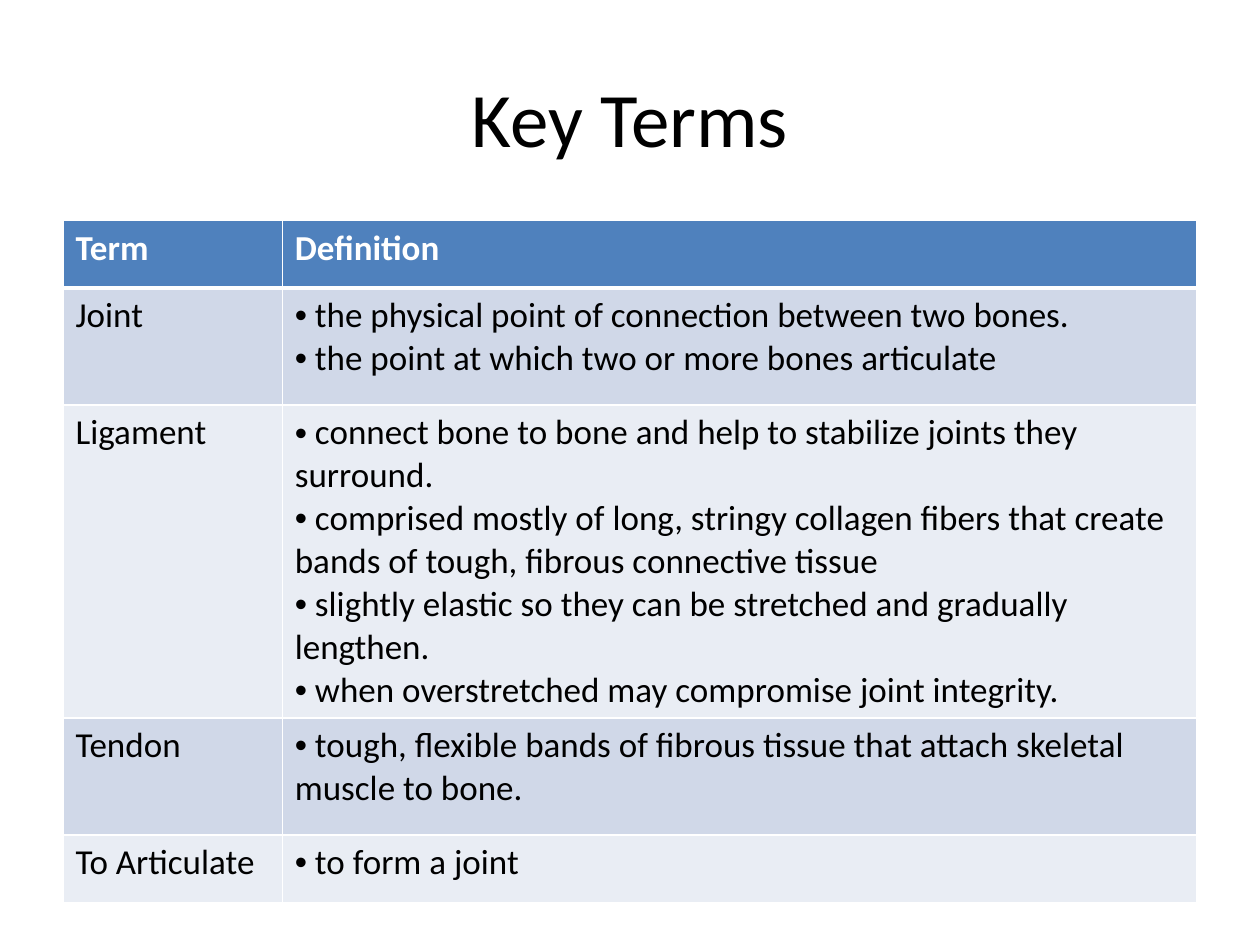
from pptx import Presentation
from pptx.dml.color import RGBColor
from pptx.enum import text
from pptx.oxml.ns import qn
from pptx.util import Pt
from lxml import etree

TITLE = "Key Terms"
HEADINGS = ("Term", "Definition")
TERMS = [
    ("Joint", ["the physical point of connection between two bones.",
               "the point at which two or more bones articulate"]),
    ("Ligament", ["connect bone to bone and help to stabilize joints they surround.",
                  "comprised mostly of long, stringy collagen fibers that create "
                  "bands of tough, fibrous connective tissue",
                  "slightly elastic so they can be stretched and gradually lengthen.",
                  "when overstretched may compromise joint integrity."]),
    ("Tendon", ["tough, flexible bands of fibrous tissue that attach skeletal "
                "muscle to bone."]),
    ("To Articulate", ["to form a joint"]),
]
COLORS = {"text": "000000", "white": "FFFFFF", "header": "4F81BD",
          "band_dark": "D0D8E8", "band_light": "E9EDF4"}
FONT = "Calibri"
MARGIN, CONTENT_WIDTH = 36, 648
TERM_WIDTH = 125.3
ROW_HEIGHTS = [38.6, 67, 178.6, 67, 38.6]
RULE, HEADER_RULE = 1, 3


def write(frame, lines, size=20, color="text", bold=False, align=None, bullets=False):
    for index, line in enumerate(lines):
        paragraph = frame.paragraphs[0] if index == 0 else frame.add_paragraph()
        if align is not None:
            paragraph.alignment = align
        if bullets:
            properties = paragraph._p.get_or_add_pPr()
            etree.SubElement(properties, qn("a:buFont"), typeface="Arial")
            etree.SubElement(properties, qn("a:buChar"), char="•")
        run = paragraph.add_run()
        run.text = f" {line}" if bullets else line
        run.font.name = FONT
        run.font.size = Pt(size)
        run.font.bold = bold
        run.font.color.rgb = RGBColor.from_string(COLORS[color])


def format_cell(cell, fill, top, bottom):
    """Fill the cell and rule its four sides in white."""
    properties = cell._tc.get_or_add_tcPr()
    for side, width in (("L", RULE), ("R", RULE), ("T", top), ("B", bottom)):
        line = etree.SubElement(properties, qn(f"a:ln{side}"), w=str(Pt(width)))
        solid = etree.SubElement(line, qn("a:solidFill"))
        etree.SubElement(solid, qn("a:srgbClr"), val=COLORS["white"])
    cell.fill.solid()
    cell.fill.fore_color.rgb = RGBColor.from_string(COLORS[fill])


def add_title(slide):
    title = slide.shapes.title
    title.left, title.top = Pt(MARGIN), Pt(21.6)
    title.width, title.height = Pt(CONTENT_WIDTH), Pt(90)
    title.text_frame.vertical_anchor = text.MSO_ANCHOR.MIDDLE
    write(title.text_frame, [TITLE], size=44, align=text.PP_ALIGN.CENTER)


def add_terms(slide):
    table = slide.shapes.add_table(
        len(TERMS) + 1, len(HEADINGS), Pt(MARGIN), Pt(126),
        Pt(CONTENT_WIDTH), Pt(sum(ROW_HEIGHTS))).table
    for column, width in zip(table.columns, (TERM_WIDTH, CONTENT_WIDTH - TERM_WIDTH)):
        column.width = Pt(width)
    for row, height in zip(table.rows, ROW_HEIGHTS):
        row.height = Pt(height)

    for column, heading in enumerate(HEADINGS):
        cell = table.cell(0, column)
        format_cell(cell, "header", RULE, HEADER_RULE)
        write(cell.text_frame, [heading], color="white", bold=True)

    for row, (term, definitions) in enumerate(TERMS, start=1):
        band = "band_dark" if row % 2 else "band_light"
        top = HEADER_RULE if row == 1 else RULE
        for column, lines in enumerate(([term], definitions)):
            cell = table.cell(row, column)
            format_cell(cell, band, top, RULE)
            write(cell.text_frame, lines, bullets=column == 1)


def main():
    deck = Presentation()
    deck.slide_width, deck.slide_height = Pt(720), Pt(540)
    slide = deck.slides.add_slide(deck.slide_layouts[5])
    add_title(slide)
    add_terms(slide)
    deck.save("out.pptx")


if __name__ == "__main__":
    main()
